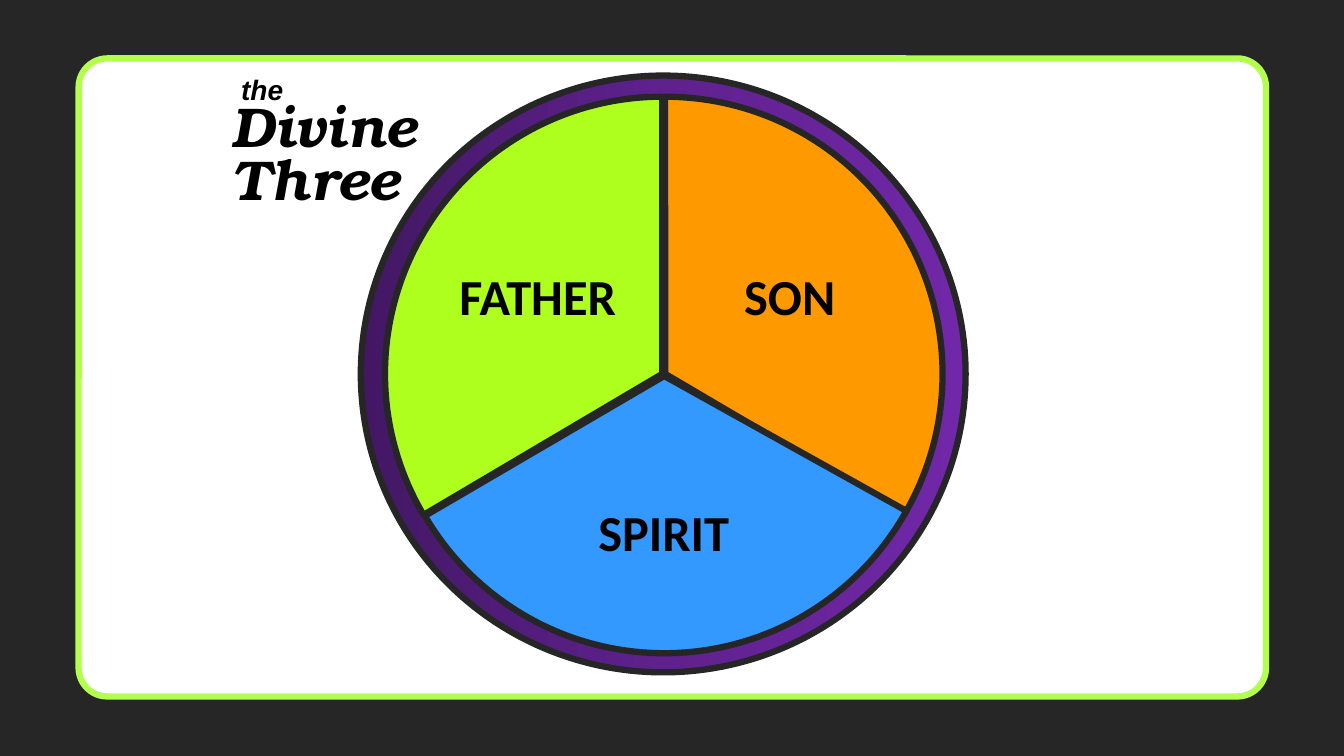
from copy import deepcopy
from typing import NamedTuple

from pptx import Presentation
from pptx.dml.color import RGBColor
from pptx.enum.shapes import MSO_SHAPE
from pptx.enum.text import MSO_ANCHOR, MSO_AUTO_SIZE, PP_ALIGN
from pptx.util import Pt

ROUNDED, ELLIPSE, PIE = MSO_SHAPE.ROUNDED_RECTANGLE, MSO_SHAPE.OVAL, MSO_SHAPE.PIE
TOP, LEFT, CENTER = MSO_ANCHOR.TOP, PP_ALIGN.LEFT, PP_ALIGN.CENTER
GROW = MSO_AUTO_SIZE.SHAPE_TO_FIT_TEXT

DARK, BLACK, WHITE, LIME = "262626", "000000", "FFFFFF", "B2FF4D"
PIE_SIZE = 396
# Pie angles, as multiples of 100000 / 60000 degrees
PIE_ANGLES = 89.65, 162
LABEL_WIDTH, LABEL_HEIGHT = 156.24, 51.12


class Box(NamedTuple):
    left: float
    top: float
    width: float
    height: float


class Person(NamedTuple):
    label: str
    color: str
    rotation: float
    pie_left: float
    pie_top: float
    label_left: float
    label_top: float


class TitleLine(NamedTuple):
    text: str
    font: str
    size: float
    indent: float


PERSONS = [
    Person("FATHER", "AEFF1D", 0, 275.04, 69.12, 306, 185.76),
    Person("SON", "FF9900", 120.5, 277.2, 69.12, 486, 185.76),
    Person("SPIRIT", "3399FF", 239.7, 276.48, 70.56, 396, 354.24),
]
TITLE_LINES = [
    TitleLine("the", "Arial", 20, 6.67),
    TitleLine("Divine", "TeX Gyre Bonum", 40, 0),
    TitleLine("Three", "TeX Gyre Bonum", 40, 0),
]
RING_STOPS = [(0, "431764"), (0.5, "5F218E"), (1, "7128A8")]


def rgb(color: str) -> RGBColor:
    return RGBColor.from_string(color)


def in_points(box: Box) -> list[Pt]:
    return [Pt(length) for length in box]


def add_outlined(slide, kind, box: Box, line: str, fill: str = ""):
    shape = slide.shapes.add_shape(kind, *in_points(box))
    shape.shadow.inherit = False
    shape.line.color.rgb = rgb(line)
    shape.line.width = Pt(4.5)
    if fill:
        shape.fill.solid()
        shape.fill.fore_color.rgb = rgb(fill)
    return shape


def fill_gradient(shape, stops: list[tuple[float, str]]) -> None:
    shape.fill.gradient()
    shape.fill.gradient_angle = 0
    stop_list = shape.fill._fill._gradFill.gsLst
    while len(stop_list) < len(stops):
        stop_list.append(deepcopy(stop_list[0]))
    for stop, (position, color) in zip(shape.fill.gradient_stops, stops):
        stop.position = position
        stop.color.rgb = rgb(color)


def add_bold_run(paragraph, text: str, font: str, size: float, italic: bool = False) -> None:
    run = paragraph.add_run()
    run.text = text
    run.font.name, run.font.size = font, Pt(size)
    run.font.bold, run.font.italic = True, italic
    run.font.color.rgb = rgb(BLACK)


def add_label(slide, person: Person) -> None:
    box = Box(person.label_left, person.label_top, LABEL_WIDTH, LABEL_HEIGHT)
    frame = slide.shapes.add_textbox(*in_points(box)).text_frame
    frame.word_wrap = True
    frame.auto_size = GROW
    paragraph = frame.paragraphs[0]
    paragraph.alignment = CENTER
    add_bold_run(paragraph, person.label, "Calibri", 36)


def write_title(slide, box: Box) -> None:
    """Format the title placeholder and bring it in front of the panel."""
    title = slide.shapes.title
    title.left, title.top, title.width, title.height = in_points(box)
    slide.shapes._spTree.append(title._element)
    frame = title.text_frame
    frame.word_wrap = True
    frame.auto_size = GROW
    frame.vertical_anchor = TOP
    for number, line in enumerate(TITLE_LINES):
        paragraph = frame.add_paragraph() if number else frame.paragraphs[0]
        paragraph.alignment = LEFT
        paragraph.line_spacing = Pt(38)
        paragraph._p.get_or_add_pPr().set("marL", str(Pt(line.indent)))
        add_bold_run(paragraph, line.text, line.font, line.size, italic=True)


def main() -> None:
    deck = Presentation()
    deck.slide_width, deck.slide_height = Pt(960), Pt(540)
    slide = deck.slides.add_slide(deck.slide_layouts.get_by_name("Title Only"))
    slide.background.fill.solid()
    slide.background.fill.fore_color.rgb = rgb(DARK)

    panel = add_outlined(slide, ROUNDED, Box(56.16, 41.76, 848.16, 455.76), LIME, WHITE)
    panel.adjustments[0] = 0.045
    ring = add_outlined(slide, ELLIPSE, Box(257.76, 54, 432, 426.24), DARK)
    fill_gradient(ring, RING_STOPS)

    for person in PERSONS:
        box = Box(person.pie_left, person.pie_top, PIE_SIZE, PIE_SIZE)
        sector = add_outlined(slide, PIE, box, DARK, person.color)
        sector.adjustments[0], sector.adjustments[1] = PIE_ANGLES
        sector.rotation = person.rotation
    for person in PERSONS:
        add_label(slide, person)
    write_title(slide, Box(158.4, 33.84, 156.24, 122.4))

    deck.save("out.pptx")


if __name__ == "__main__":
    main()
